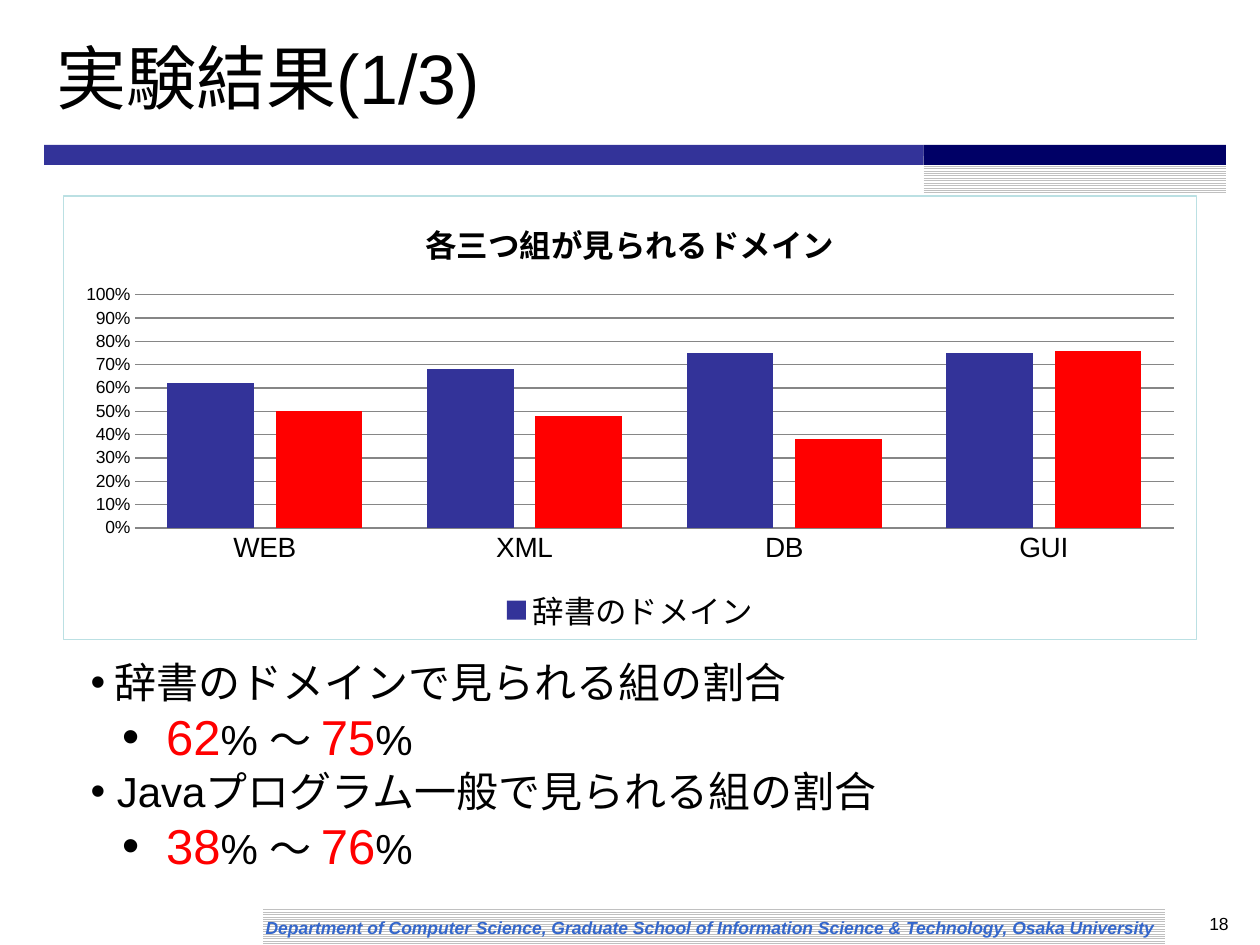
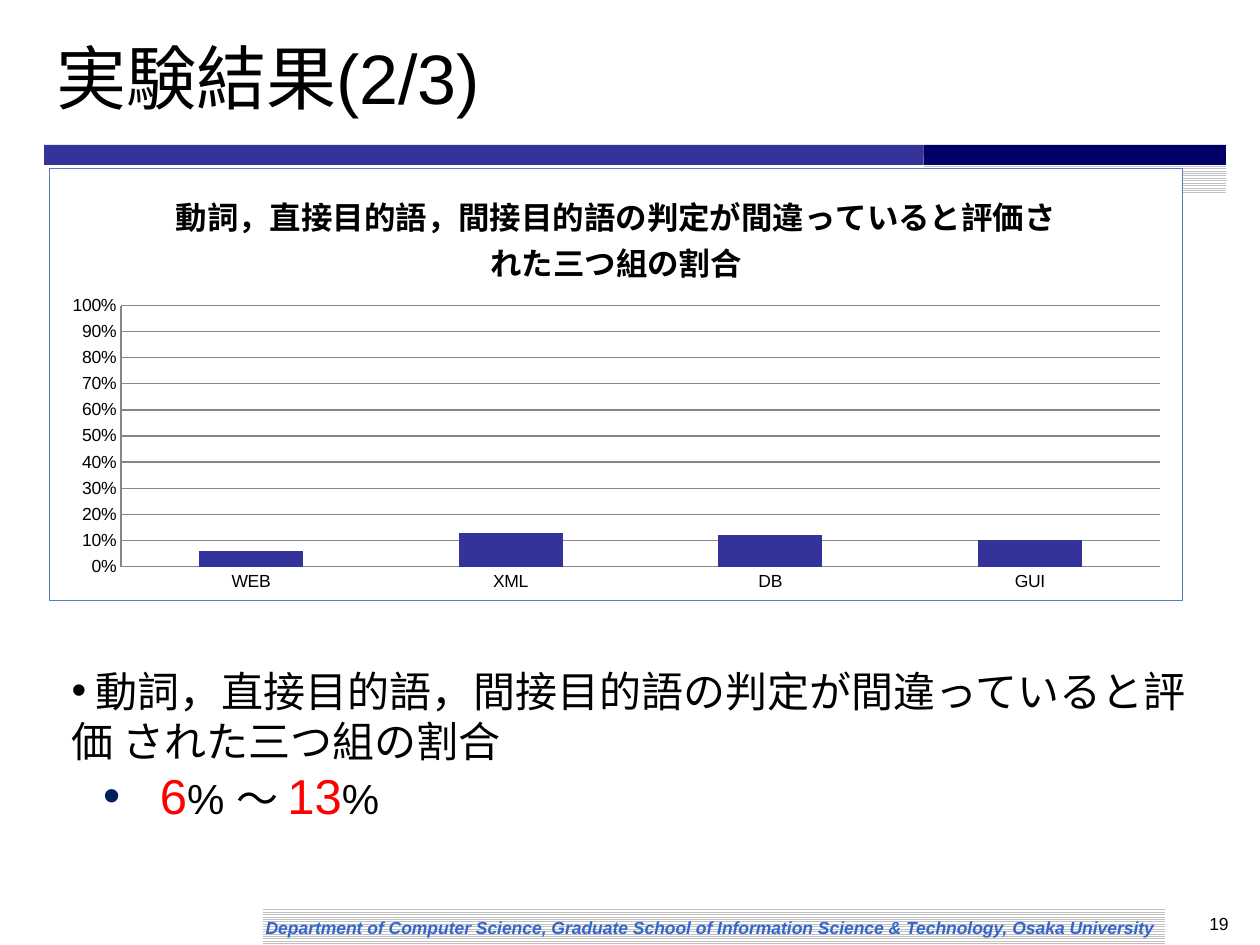
from dataclasses import dataclass
from lxml.etree import SubElement
from pptx import Presentation
from pptx.chart.data import CategoryChartData
from pptx.dml.color import RGBColor
from pptx.enum.chart import XL_CHART_TYPE as ChartType, XL_LEGEND_POSITION as LegendPosition, XL_TICK_MARK as TickMark
from pptx.enum.dml import MSO_PATTERN as Pattern
from pptx.enum.shapes import MSO_SHAPE as Shape
from pptx.enum.text import MSO_ANCHOR as Anchor, PP_ALIGN as Align
from pptx.oxml import parse_xml
from pptx.oxml.ns import nsdecls, qn
from pptx.util import Inches, Pt


@dataclass(frozen=True)
class Theme:
    font: str = "Arial"
    text: str = "000000"
    accent: str = "FF0000"
    band: str = "333399"
    band_dark: str = "000066"
    stripe: str = "C0C0C0"
    paper: str = "FFFFFF"
    footer: str = "3366CC"
    navy: str = "002060"
    grid: str = "868686"
    title_size: int = 40
    figure_size: int = 28
    body_size: int = 24
    chart_title_size: int = 18
    category_size: int = 16
    small_size: int = 10


THEME = Theme()
FOOTER = "Department of Computer Science, Graduate School of Information Science & Technology, Osaka University"
DOMAINS = ["WEB", "XML", "DB", "GUI"]

BANDS = [
    ((2.09, 7.2, 7.16, 0.3), None),
    ((0.35, 1.15, 6.98, 0.16), THEME.band),
    ((7.33, 1.24, 2.4, 0.3), None),
    ((7.33, 1.15, 2.4, 0.16), THEME.band_dark),
]

SLIDES = [
    {
        "title": "実験結果(1/3)",
        "number": "18",
        "chart": {
            "at": (0.5, 1.55, 9, 3.53),
            "plot": (0.063, 0.223, 0.917, 0.526),
            "title": "各三つ組が見られるドメイン",
            "series": [
                ("辞書のドメイン", (0.62, 0.68, 0.75, 0.75), THEME.band),
                ("Ｊａｖａ", (0.5, 0.48, 0.38, 0.76), THEME.accent),
            ],
            "gap": 75,
            "overlap": -25,
            "border": "BBE0E3",
            "category_size": THEME.category_size,
            "value_line": False,
            "legend": True,
        },
        "body_at": (0.62, 5.16, 8.91, 1.85),
        "range_indent": (0.6, -0.35),
        "bullet": THEME.text,
        "findings": [
            (" 辞書のドメインで見られる組の割合", ("62", "75")),
            (" Javaプログラム一般で見られる組の割合", ("38", "76")),
        ],
    },
    {
        "title": "実験結果(2/3)",
        "number": "19",
        "chart": {
            "at": (0.39, 1.33, 9, 3.44),
            "plot": (0.063, 0.318, 0.917, 0.604),
            "title": "動詞，直接目的語，間接目的語の判定が間違っていると評価された三つ組の割合",
            "series": [("Series 1", (0.06, 0.13, 0.12, 0.1), THEME.band)],
            "gap": 150,
            "overlap": 0,
            "border": "4F81BD",
            "category_size": THEME.small_size,
            "value_line": True,
            "legend": False,
        },
        "body_at": (0.47, 5.23, 9.06, 1.38),
        "range_indent": (0.7, -0.45),
        "bullet": THEME.navy,
        "findings": [
            (" 動詞，直接目的語，間接目的語の判定が間違っていると評価 された三つ組の割合", ("6", "13")),
        ],
    },
]


def rgb(color):
    return RGBColor.from_string(color)


def style_font(font, size, color=THEME.text, bold=False, italic=False):
    font.name = THEME.font
    font.size = Pt(size)
    font.color.rgb = rgb(color)
    font.bold = bold
    font.italic = italic


def add_span(para, text, size, color=THEME.text, **styles):
    span = para.add_run()
    span.text = text
    style_font(span.font, size, color, **styles)


def add_box(page, at, anchor=Anchor.TOP):
    box = page.shapes.add_textbox(*map(Inches, at))
    box.text_frame.word_wrap = True
    box.text_frame.vertical_anchor = anchor
    return box.text_frame


def add_bullet(para, color, margin=0, indent=0):
    properties = para._p.get_or_add_pPr()
    properties.set("marL", str(Inches(margin)))
    properties.set("indent", str(Inches(indent)))
    tint = SubElement(properties, qn("a:buClr"))
    SubElement(tint, qn("a:srgbClr")).set("val", color)
    SubElement(properties, qn("a:buFont")).set("typeface", THEME.font)
    SubElement(properties, qn("a:buChar")).set("char", "•")


def add_frame(page, title, number):
    for at, color in BANDS:
        band = page.shapes.add_shape(Shape.RECTANGLE, *map(Inches, at))
        band.shadow.inherit = False
        band.line.fill.background()
        if color:
            band.fill.solid()
            band.fill.fore_color.rgb = rgb(color)
        else:
            band.fill.patterned()
            band.fill.pattern = Pattern.LIGHT_HORIZONTAL
            band.fill.fore_color.rgb = rgb(THEME.stripe)
            band.fill.back_color.rgb = rgb(THEME.paper)
    footer = add_box(page, (2.01, 7.23, 7.32, 0.27), Anchor.MIDDLE)
    add_span(footer.paragraphs[0], FOOTER, THEME.small_size, THEME.footer, bold=True, italic=True)
    heading = add_box(page, (0.35, 0.13, 9.38, 0.95), Anchor.MIDDLE)
    add_span(heading.paragraphs[0], title, THEME.title_size)
    page_number = add_box(page, (9.25, 7.2, 0.6, 0.3)).paragraphs[0]
    page_number.alignment = Align.RIGHT
    add_span(page_number, number, THEME.small_size)


def place_plot(chart, plot):
    area = chart._chartSpace.chart.plotArea
    for old in area.findall(qn("c:layout")):
        area.remove(old)
    layout = parse_xml(f"<c:layout {nsdecls('c')}/>")
    manual = SubElement(layout, qn("c:manualLayout"))
    settings = [("layoutTarget", "inner"), ("xMode", "edge"), ("yMode", "edge")]
    for name, value in settings + list(zip("xywh", plot)):
        SubElement(manual, qn(f"c:{name}")).set("val", str(value))
    area.insert(0, layout)


def add_border(chart, color):
    chart._chartSpace.find(qn("c:txPr")).addprevious(parse_xml(
        f'<c:spPr {nsdecls("c", "a")}>'
        f'<a:solidFill><a:srgbClr val="{THEME.paper}"/></a:solidFill>'
        f'<a:ln w="{Pt(0.75)}"><a:solidFill><a:srgbClr val="{color}"/></a:solidFill></a:ln>'
        "</c:spPr>"))


def add_legend(chart):
    chart.has_legend = True
    legend = chart.legend
    legend.position = LegendPosition.BOTTOM
    legend.include_in_layout = False
    style_font(legend.font, THEME.chart_title_size)
    legend._element.find(qn("c:legendPos")).addnext(parse_xml(
        f'<c:legendEntry {nsdecls("c")}><c:idx val="1"/><c:delete val="1"/></c:legendEntry>'))


def add_domain_chart(page, at, plot, title, series, gap, overlap, border, category_size, value_line, legend):
    data = CategoryChartData(number_format="0%")
    data.categories = DOMAINS
    for name, values, _ in series:
        data.add_series(name, values)
    chart = page.shapes.add_chart(ChartType.COLUMN_CLUSTERED, *map(Inches, at), data).chart
    style_font(chart.font, THEME.small_size)
    chart.has_title = True
    add_span(chart.chart_title.text_frame.paragraphs[0], title, THEME.chart_title_size, bold=True)
    columns = chart.plots[0]
    columns.vary_by_categories = False
    columns.gap_width = gap
    columns.overlap = overlap
    for column, (_, _, color) in zip(columns.series, series):
        column.format.fill.solid()
        column.format.fill.fore_color.rgb = rgb(color)
        column.invert_if_negative = False

    scale = chart.value_axis
    scale.minimum_scale, scale.maximum_scale, scale.major_unit = 0, 1, 0.1
    scale.tick_labels.number_format = "0%"
    scale.tick_labels.number_format_is_linked = False
    scale.has_major_gridlines = True
    for axis in (scale, chart.category_axis):
        axis.major_tick_mark = axis.minor_tick_mark = TickMark.NONE
    for part in (scale.major_gridlines, scale, chart.category_axis):
        part.format.line.color.rgb = rgb(THEME.grid)
        part.format.line.width = Pt(0.75)
    if not value_line:
        scale.format.line.fill.background()
    style_font(scale.tick_labels.font, THEME.small_size)
    style_font(chart.category_axis.tick_labels.font, category_size)

    chart.has_legend = False
    if legend:
        add_legend(chart)
    place_plot(chart, plot)
    add_border(chart, border)


def add_findings(page, at, findings, range_indent, bullet):
    frame = add_box(page, at)
    for index, (claim, (low, high)) in enumerate(findings):
        para = frame.add_paragraph() if index else frame.paragraphs[0]
        add_bullet(para, THEME.text)
        add_span(para, claim, THEME.body_size)
        para = frame.add_paragraph()
        para.level = 1
        add_bullet(para, bullet, *range_indent)
        for figure, unit in ((low, "% ～ "), (high, "%")):
            add_span(para, figure, THEME.figure_size, THEME.accent)
            add_span(para, unit, THEME.body_size)


def main():
    deck = Presentation()
    deck.slide_width, deck.slide_height = Inches(10), Inches(7.5)
    for content in SLIDES:
        page = deck.slides.add_slide(deck.slide_layouts[6])
        add_frame(page, content["title"], content["number"])
        add_domain_chart(page, **content["chart"])
        add_findings(page, content["body_at"], content["findings"], content["range_indent"], content["bullet"])
    deck.save("out.pptx")


if __name__ == "__main__":
    main()
